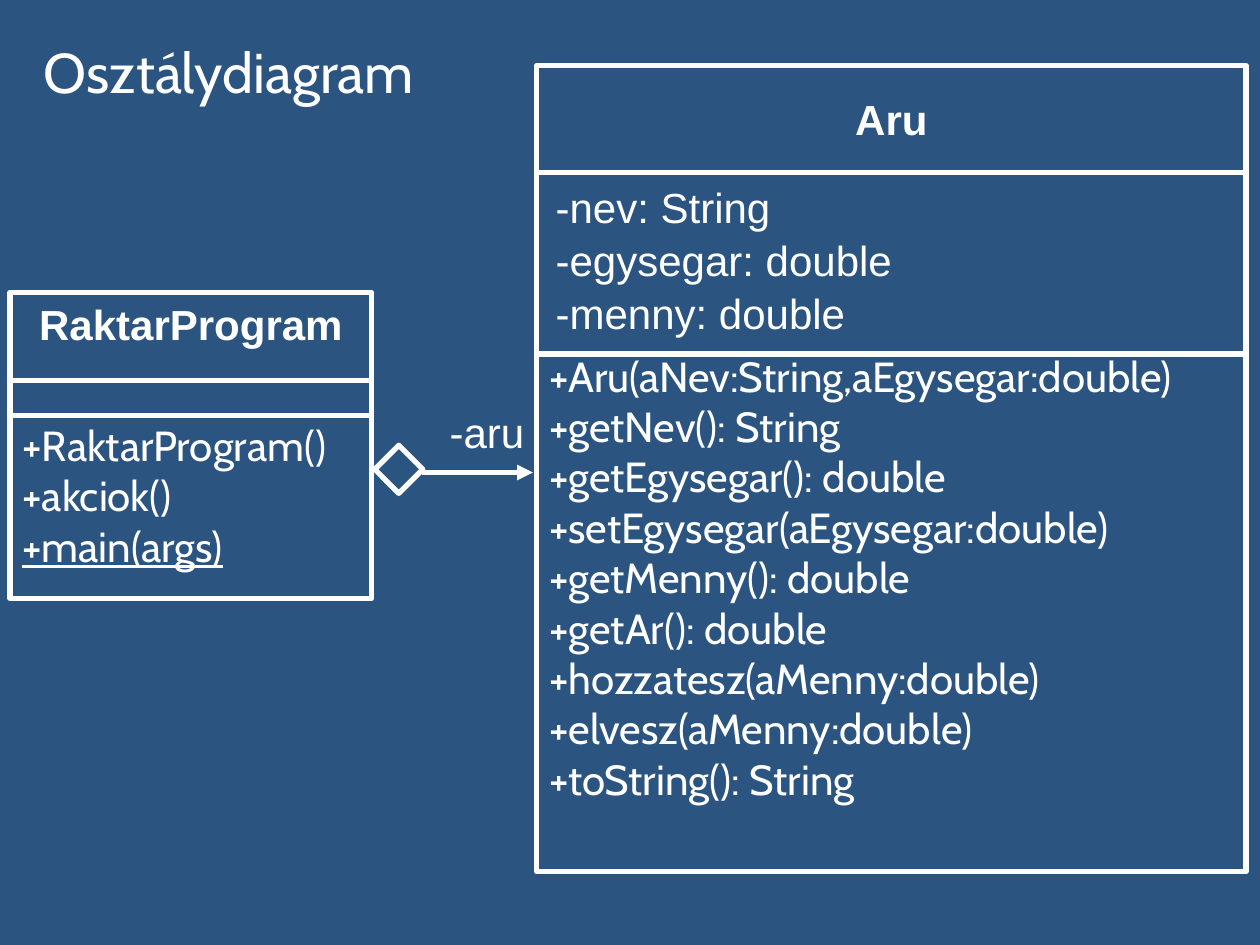
from lxml import etree
from pptx import Presentation
from pptx.dml.color import RGBColor
from pptx.enum.shapes import MSO_CONNECTOR, MSO_SHAPE
from pptx.enum.text import MSO_ANCHOR, PP_ALIGN
from pptx.oxml.ns import qn
from pptx.util import Inches, Pt

RECT, STRAIGHT = MSO_SHAPE.RECTANGLE, MSO_CONNECTOR.STRAIGHT
TOP, MIDDLE = MSO_ANCHOR.TOP, MSO_ANCHOR.MIDDLE
LEFT, CENTER = PP_ALIGN.LEFT, PP_ALIGN.CENTER
COLORS = {"background": "2B5481", "ink": "FFFFFF"}


def rgb(name):
    """Return the named colour."""
    return RGBColor.from_string(COLORS[name])


def write(sp, lines, font="Arial", size=24, bold=False, align=LEFT,
          anchor=TOP, spacing=1.0, inset=0.1, underlined=()):
    """Fill a shape with one paragraph per line."""
    tf = sp.text_frame
    tf.word_wrap = True
    tf.vertical_anchor = anchor
    tf.margin_left = tf.margin_right = Inches(inset)
    tf.margin_top = tf.margin_bottom = Inches(0.05)
    for i, line in enumerate(lines):
        p = tf.add_paragraph() if i else tf.paragraphs[0]
        p.alignment = align
        p.line_spacing = spacing
        r = p.add_run()
        r.text = line
        r.font.name, r.font.size, r.font.bold = font, Pt(size), bold
        r.font.color.rgb = rgb("ink")
        if line in underlined:
            r.font.underline = True


def add_text(s, x, y, w, h, lines, **fmt):
    """Add a text box."""
    sp = s.shapes.add_textbox(Inches(x), Inches(y), Inches(w), Inches(h))
    write(sp, lines, **fmt)


def add_rect(s, x, y, w, h):
    """Add an outlined rectangle without fill."""
    sp = s.shapes.add_shape(RECT, Inches(x), Inches(y), Inches(w), Inches(h))
    sp.shadow.inherit = False
    sp.fill.background()
    sp.line.color.rgb = rgb("ink")
    sp.line.width = Pt(3)
    return sp


def add_line(s, x1, y1, x2, y2, arrow=False):
    """Add a straight line, with an arrowhead at its end if asked."""
    sp = s.shapes.add_connector(STRAIGHT, Inches(x1), Inches(y1),
                                Inches(x2), Inches(y2))
    sp.line.color.rgb = rgb("ink")
    sp.line.width = Pt(3)
    if arrow:
        ln = sp.line._get_or_add_ln()
        etree.SubElement(ln, qn("a:tailEnd"), type="triangle")
    etree.SubElement(sp._element.spPr, qn("a:effectLst"))


def add_class(s, x, y, w, h, name, attributes, methods, name_h, methods_y,
              anchor=TOP, lift=0.0, underlined=()):
    """Draw a class box with name, attribute and method compartments."""
    write(add_rect(s, x, y, w, name_h), [name], bold=True, align=CENTER,
          anchor=anchor, inset=0.04)
    add_rect(s, x, y + methods_y, w, h - methods_y)
    for side in (x, x + w):
        add_line(s, side, y + name_h, side, y + methods_y)
    if attributes:
        add_text(s, x + 0.11, y + name_h, w - 0.11, methods_y - name_h,
                 attributes, spacing=1.05, inset=0.04)
    add_text(s, x, y + methods_y - lift, w, h - methods_y, methods,
             font="Cabin", underlined=underlined)


def add_aggregation(s, x, y, w, label):
    """Draw a diamond and an arrow on the height y, with a role label."""
    side = 0.27
    sp = add_rect(s, x + 0.08, y - 0.16, side, side)
    sp.rotation = 45
    add_line(s, x + 0.4, y, x + w, y, arrow=True)
    add_text(s, x + 0.52, y - 0.57, 1.0, 0.5, [label])


def main():
    """Build the class diagram slide."""
    prs = Presentation()
    prs.slide_width, prs.slide_height = Inches(10), Inches(7.5)
    s = prs.slides.add_slide(prs.slide_layouts[6])
    s.background.fill.solid()
    s.background.fill.fore_color.rgb = rgb("background")
    add_text(s, 0.25, 0.17, 3.66, 0.92, ["Osztálydiagram"], font="Cabin",
             size=32, spacing=1.15)
    add_class(s, 0.08, 2.32, 2.87, 2.43, "RaktarProgram", [],
              ["+RaktarProgram()", "+akciok()", "+main(args)"],
              name_h=0.7, methods_y=0.98, lift=0.02,
              underlined=["+main(args)"])
    add_class(s, 4.26, 0.52, 5.63, 6.4, "Aru",
              ["-nev: String", "-egysegar: double", "-menny: double"],
              ["+Aru(aNev:String,aEgysegar:double)", "+getNev(): String",
               "+getEgysegar(): double", "+setEgysegar(aEgysegar:double)",
               "+getMenny(): double", "+getAr(): double",
               "+hozzatesz(aMenny:double)", "+elvesz(aMenny:double)",
               "+toString(): String"],
              name_h=0.85, methods_y=2.29, anchor=MIDDLE, lift=0.08)
    add_aggregation(s, 2.95, 3.75, 1.28, "-aru")
    prs.save("out.pptx")


if __name__ == "__main__":
    main()
